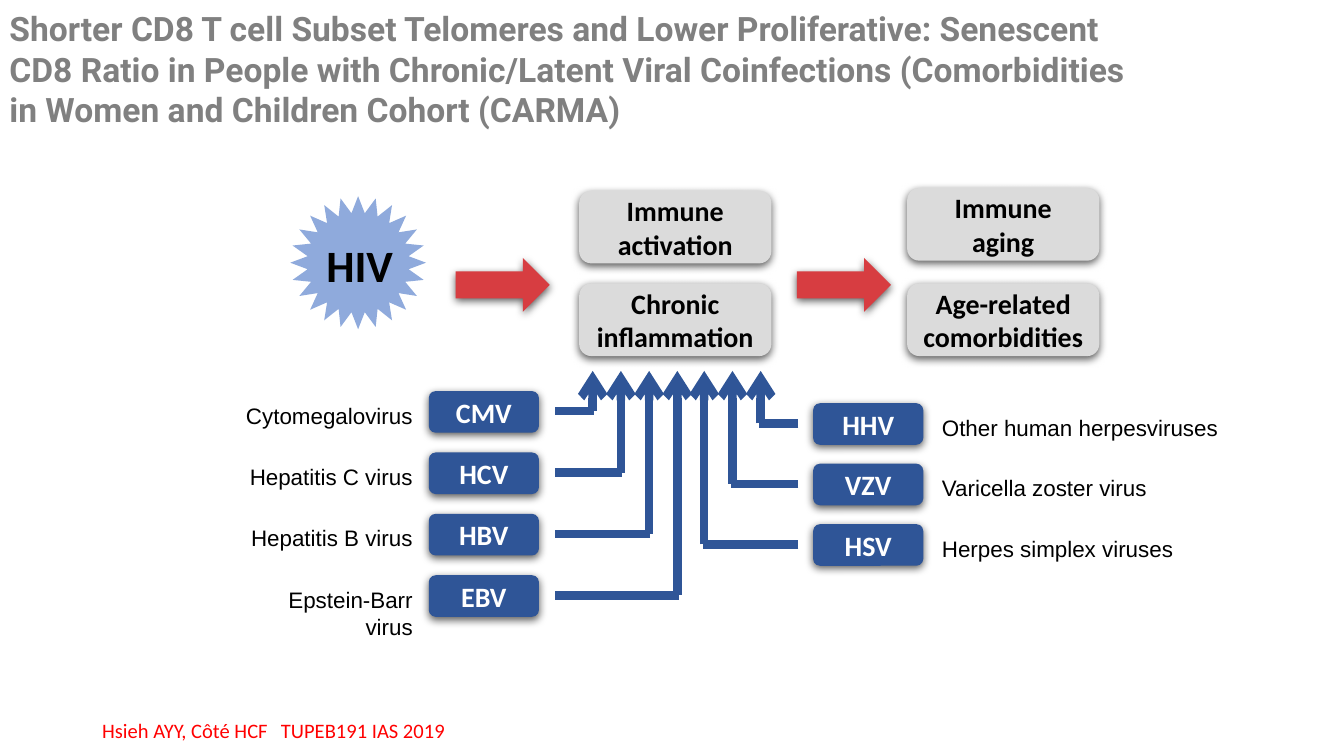
import pptx
import pptx.dml.color
import pptx.enum.shapes
import pptx.enum.text
import pptx.oxml
import pptx.oxml.ns
import pptx.util
from dataclasses import dataclass

Inches = pptx.util.Inches
SHAPES = pptx.enum.shapes.MSO_SHAPE
ALIGN = pptx.enum.text.PP_ALIGN
ANCHOR = pptx.enum.text.MSO_ANCHOR
NAMESPACE = pptx.oxml.ns.nsdecls("a")


@dataclass(frozen=True)
class Theme:
    title: str = "808080"
    ink: str = "000000"
    light: str = "FFFFFF"
    citation: str = "FF0000"
    blue: str = "2F5597"
    star: str = "8FAADC"
    red: str = "D73D41"
    grey: str = "DBDBDB"
    title_size: int = 18
    star_size: int = 24
    box_size: int = 15
    label_size: int = 12
    citation_size: int = 11
    line_width: float = 4.5


THEME = Theme()


def rgb(value):
    return pptx.dml.color.RGBColor.from_string(value)


def write(shape, text, size, color, font="Calibri", bold=False,
          align=ALIGN.LEFT, **frame_format):
    frame = shape.text_frame
    settings = {"word_wrap": True, "vertical_anchor": ANCHOR.TOP,
                "auto_size": pptx.enum.text.MSO_AUTO_SIZE.NONE, **frame_format}
    for name, value in settings.items():
        setattr(frame, name, value)
    para = frame.paragraphs[0]
    para.alignment = align
    span = para.add_run()
    span.text = text
    span.font.color.rgb = rgb(color)
    for name, value in {"name": font, "size": pptx.util.Pt(size), "bold": bold}.items():
        setattr(span.font, name, value)
    return para


def insets(side, edge):
    return {"margin_left": Inches(side), "margin_right": Inches(side),
            "margin_top": Inches(edge), "margin_bottom": Inches(edge)}


def add_text(page, box, text, size, color, **options):
    shape = page.shapes.add_textbox(*map(Inches, box))
    return write(shape, text, size, color, **options)


def add_figure(page, kind, box, fill, raised=True):
    shape = page.shapes.add_shape(kind, *map(Inches, box))
    shape.shadow.inherit = False
    shape.fill.solid()
    shape.fill.fore_color.rgb = rgb(fill)
    shape.line.fill.background()
    if raised:
        effects = shape._element.spPr.find(pptx.oxml.ns.qn("a:effectLst"))
        effects.append(pptx.oxml.parse_xml(
            f'<a:outerShdw {NAMESPACE} blurRad="57150" dist="19050" dir="5400000" '
            'algn="ctr" rotWithShape="0"><a:srgbClr val="000000">'
            '<a:alpha val="63000"/></a:srgbClr></a:outerShdw>'))
    return shape


def add_box(page, box, text, fill, color, **margins):
    shape = add_figure(page, SHAPES.FLOWCHART_ALTERNATE_PROCESS, box, fill)
    write(shape, text, THEME.box_size, color, bold=True, align=ALIGN.CENTER,
          vertical_anchor=ANCHOR.MIDDLE, **margins)


def add_line(page, start, end, arrow=False):
    line = page.shapes.add_connector(pptx.enum.shapes.MSO_CONNECTOR.STRAIGHT,
                                     *map(Inches, (*start, *end)))
    line.line.color.rgb = rgb(THEME.blue)
    line.line.width = pptx.util.Pt(THEME.line_width)
    if arrow:
        line.line._get_or_add_ln().append(
            pptx.oxml.parse_xml(f'<a:tailEnd {NAMESPACE} type="arrow"/>'))
    line._element.spPr.append(pptx.oxml.parse_xml(f"<a:effectLst {NAMESPACE}/>"))


def place_title(page, box, text):
    title = page.shapes.title
    for name, value in zip(("left", "top", "width", "height"), box):
        setattr(title, name, Inches(value))
    write(title, text, THEME.title_size, THEME.title, font="Roboto", bold=True,
          **insets(0.07, 0.04))


def place_cause(page, box):
    """Star with the virus name at its centre."""
    left, top, width, height = box
    add_figure(page, SHAPES.STAR_24_POINT, box, THEME.star, raised=False)
    add_text(page, (left + 0.17, top + 0.26, 0.7, 0.5), "HIV", THEME.star_size,
             THEME.ink, bold=True, word_wrap=False)


def place_stage(page, box, entries, first_rise=0):
    """Red arrow followed by two stacked boxes."""
    left, top, width, height = box
    box_width, box_height = 1.43, 0.54
    add_figure(page, SHAPES.RIGHT_ARROW, (left, top + 0.5, 0.7, 0.4), THEME.red)
    box_left = left + width - box_width
    tops = (top - first_rise, top + height - box_height)
    for text, box_top in zip(entries, tops):
        add_box(page, (box_left, box_top, box_width, box_height), text,
                THEME.grey, THEME.ink, **insets(0.08, 0.04))


def place_viruses(page, box, rows, mirrored=False):
    """Labelled viruses whose elbows rise to evenly spaced arrowheads."""
    left, top, width, height = box
    chip_width, chip_height = 0.82, 0.31
    row_gap = (height - chip_height) / (len(rows) - 1)
    arrow_top, arrow_gap, overlap = 2.76, 0.21, 0.01
    if mirrored:
        chip, label, lane = left + 0.39, left + 1.25, left + 0.28
        first_arrow, direction, align, label_width = left, -1, ALIGN.LEFT, 2.29
    else:
        chip, label, lane = left + 1.54, left, left + 2.48
        first_arrow, direction, align, label_width = left + 2.76, 1, ALIGN.RIGHT, 1.52
    for index, (short, name) in enumerate(rows):
        row_top = top + index * row_gap
        lane_y = row_top + 0.15
        arrow_x = first_arrow + direction * index * arrow_gap
        add_text(page, (label, row_top + 0.03, label_width, 0.3), name,
                 THEME.label_size, THEME.ink, font="Arial", align=align)
        add_box(page, (chip, row_top, chip_width, chip_height), short,
                THEME.blue, THEME.light)
        add_line(page, (arrow_x, lane_y), (arrow_x, arrow_top), arrow=True)
        add_line(page, (lane, lane_y), (arrow_x + direction * overlap, lane_y))


def place_citation(page, box, authors, reference):
    para = add_text(page, box, f"{authors}\t{reference}", THEME.citation_size,
                    THEME.citation, **insets(0.07, 0.04))
    para._p.get_or_add_pPr().append(pptx.oxml.parse_xml(
        f'<a:tabLst {NAMESPACE}><a:tab pos="{Inches(1.33)}" algn="l"/></a:tabLst>'))


def main():
    deck = pptx.Presentation()
    deck.slide_width = Inches(10)
    deck.slide_height = deck.slide_width * 9 // 16
    page = deck.slides.add_slide(deck.slide_layouts[5])

    # Heading
    place_title(page, (0, 0.02, 8.55, 1.29),
                "Shorter CD8 T cell Subset Telomeres and Lower Proliferative: "
                "Senescent CD8 Ratio in People with Chronic/Latent Viral "
                "Coinfections (Comorbidities in Women and Children Cohort (CARMA)")

    # Chain from cause to outcome
    place_cause(page, (2.16, 1.46, 1.01, 0.99))
    place_stage(page, (3.39, 1.42, 2.35, 1.23),
                ("Immune activation", "Chronic inflammation"))
    place_stage(page, (5.93, 1.42, 2.25, 1.23),
                ("Immune aging", "Age-related comorbidities"), first_rise=0.02)

    # Coinfections on both sides
    place_viruses(page, (1.65, 2.91, 3.4, 1.68),
                  (("CMV", "Cytomegalovirus"), ("HCV", "Hepatitis C virus"),
                   ("HBV", "Hepatitis B virus"), ("EBV", "Epstein-Barr virus")))
    place_viruses(page, (5.66, 3, 3.54, 1.21),
                  (("HHV", "Other human herpesviruses"),
                   ("VZV", "Varicella zoster virus"),
                   ("HSV", "Herpes simplex viruses")), mirrored=True)

    # Source line
    place_citation(page, (0.69, 5.3, 2.7, 0.26), "Hsieh AYY, Côté HCF",
                   "TUPEB191 IAS 2019")
    deck.save("out.pptx")


if __name__ == "__main__":
    main()
